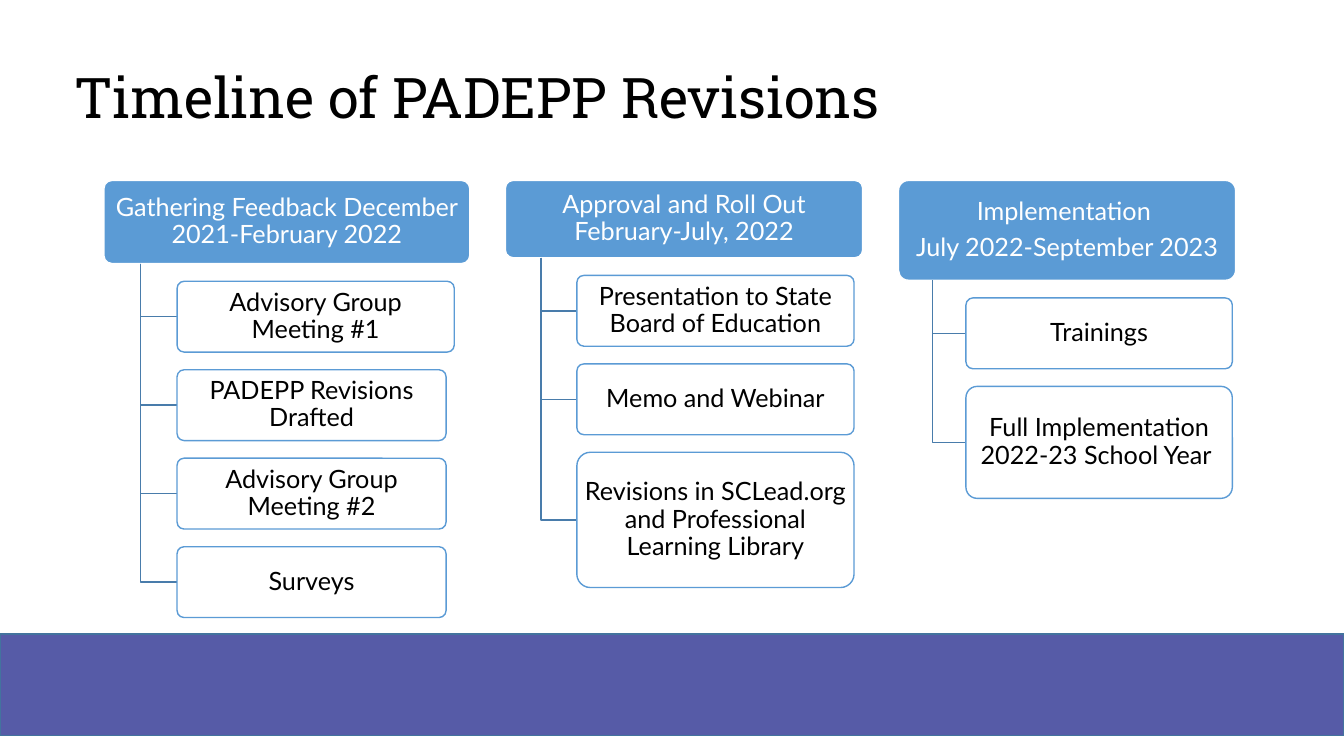
from lxml.etree import SubElement
from pptx import Presentation
from pptx.dml.color import RGBColor
from pptx.enum.shapes import MSO_SHAPE as Kind
from pptx.enum.text import MSO_ANCHOR as Anchor, PP_ALIGN as Align
from pptx.oxml.ns import qn
from pptx.util import Pt


def paint(part, color):
    if hasattr(part, "solid"):
        part.solid()
        part.fore_color.rgb = RGBColor.from_string(color)
    else:
        part.color.rgb = RGBColor.from_string(color)


def add_box(kind, x, y, w, h, fill, line, text="", ink="000000"):
    box = slide.shapes.add_shape(kind, Pt(x), Pt(y), Pt(w), Pt(h))
    box.shadow.inherit = False
    paint(box.fill, fill)
    paint(box.line, line)
    box.line.width = Pt(1)
    if kind == Kind.ROUNDED_RECTANGLE:
        box.adjustments[0] = 0.1
    frame = box.text_frame
    frame.word_wrap = True
    frame.vertical_anchor = Anchor.MIDDLE
    frame.margin_left = frame.margin_right = Pt(2.7)
    frame.margin_top = frame.margin_bottom = Pt(2)
    frame.text = text
    for para in frame.paragraphs:
        para.alignment = Align.CENTER
        para.line_spacing = 0.9
        for run in para.runs:
            run.font.name = "Lato"
            run.font.size = Pt(18)
            paint(run.font, ink)
    for para in frame.paragraphs[:-1]:
        para.space_after = Pt(6.3)
    return box


deck = Presentation()
deck.slide_width, deck.slide_height = Pt(960), Pt(540)
slide = deck.slides.add_slide(deck.slide_layouts[6])

add_box(Kind.RECTANGLE, 0, 452.9, 960, 72.7, "565BA7", "43739E")

title = slide.shapes.add_textbox(Pt(46), Pt(28.8), Pt(864), Pt(86.4))
frame = title.text_frame
frame.word_wrap = True
frame.vertical_anchor = Anchor.MIDDLE
frame.text = "Timeline of PADEPP Revisions"
para = frame.paragraphs[0]
para.line_spacing = 0.9
font = para.runs[0].font
font.name, font.size = "Roboto Slab", Pt(40)
paint(font, "000000")

TOP, GAP, LOW = 128.9, 12.6, 50.6
stages = [
    (74.2, 261.4, 59.4, "Gathering Feedback December 2021-February 2022", [
        ("Advisory Group Meeting #1", 198, LOW),
        ("PADEPP Revisions Drafted", 192.2, LOW),
        ("Advisory Group Meeting #2", 192.2, LOW),
        ("Surveys", 192.2, LOW)]),
    (361, 255.2, 55.2, "Approval and Roll Out February-July, 2022", [
        ("Presentation to State Board of Education", 198, LOW),
        ("Memo and Webinar", 198, LOW),
        ("Revisions in SCLead.org and Professional Learning Library", 198, 96.6)]),
    (641.8, 240.8, 71.3, "Implementation \nJuly 2022-September 2023", [
        ("Trainings", 190.3, LOW),
        ("Full Implementation 2022-23 School Year ", 190.3, 80)]),
]

for left, width, height, head, steps in stages:
    add_box(Kind.ROUNDED_RECTANGLE, left, TOP, width, height,
            "5B9BD5", "FFFFFF", head, "FFFFFF")
    base = TOP + height
    stem, edge = left + width * 0.1, left + width * 0.2
    y = base + GAP
    for text, wide, tall in steps:
        mid = y + tall / 2
        path = slide.shapes.build_freeform(Pt(stem), Pt(base))
        path.add_line_segments([(Pt(stem), Pt(mid)), (Pt(edge), Pt(mid))], close=False)
        elbow = path.convert_to_shape()
        elbow.shadow.inherit = False
        elbow.fill.background()
        paint(elbow.line, "497CAB")
        elbow.line.width = Pt(1)
        step = add_box(Kind.ROUNDED_RECTANGLE, edge, y, wide, tall,
                       "FFFFFF", "5B9BD5", text)
        tint = step.element.spPr.find(qn("a:solidFill"))[0]
        SubElement(tint, qn("a:alpha"), val="90000")
        y += tall + GAP

deck.save("out.pptx")
